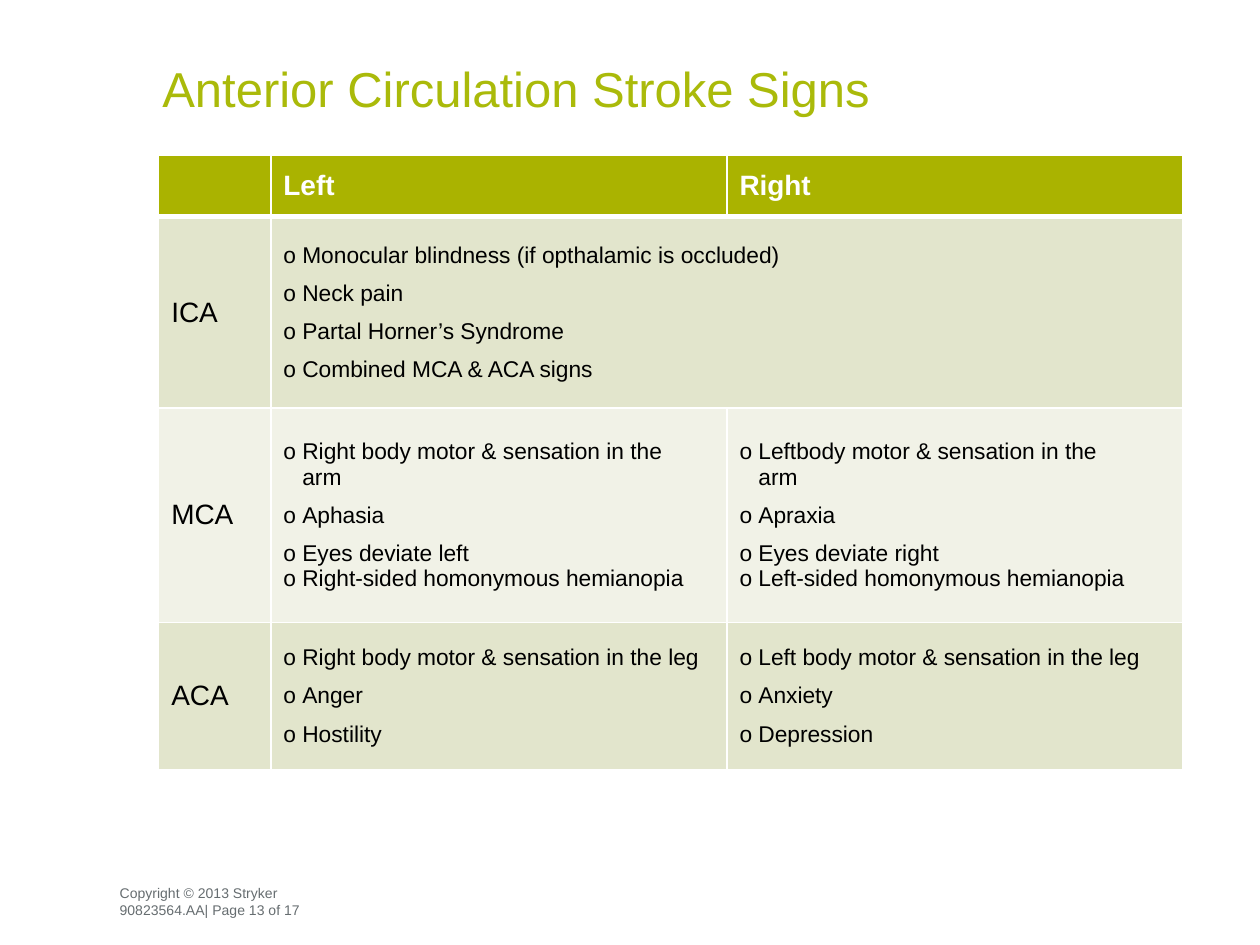
from lxml import etree
from pptx import Presentation
from pptx.dml.color import RGBColor
from pptx.enum.text import MSO_ANCHOR, MSO_AUTO_SIZE
from pptx.oxml.ns import qn
from pptx.util import Inches, Pt

MIDDLE, BOTTOM = MSO_ANCHOR.MIDDLE, MSO_ANCHOR.BOTTOM
FONT = "Arial"
WHITE, BLACK, GRAY = "FFFFFF", "000000", "666D70"
TITLE_GREEN, HEADER_GREEN = "AABA0A", "AAB300"
BANDS = ["E2E5CC", "F1F2E7"]
BULLET_INDENT = Inches(0.15)

# Content: each sign is (text, line spacing); "\n" is a line break
TITLE = "Anterior Circulation Stroke Signs"
FOOTER = ["Copyright © 2013 Stryker", "90823564.AA| Page 13 of 17"]
HEADERS = ["", "Left", "Right"]
ARTERIES = [
    ("ICA", [
        [("Monocular blindness (if opthalamic is occluded)", 1), ("Neck pain", 1.5),
         ("Partal Horner’s Syndrome", 1.5), ("Combined MCA & ACA signs", 1.5)],
    ]),
    ("MCA", [
        [("Right body motor & sensation in the\narm", 1), ("Aphasia", 1.5),
         ("Eyes deviate left", 1.5), ("Right-sided homonymous hemianopia", 1)],
        [("Leftbody motor & sensation in the\narm", 1), ("Apraxia", 1.5),
         ("Eyes deviate right", 1.5), ("Left-sided homonymous hemianopia", 1)],
    ]),
    ("ACA", [
        [("Right body motor & sensation in the leg", 1), ("Anger", 1.5), ("Hostility", 1.5)],
        [("Left body motor & sensation in the leg", 1), ("Anxiety", 1.5), ("Depression", 1.5)],
    ]),
]
COLUMN_WIDTHS = [0.89, 3.62, 3.62]
ROW_HEIGHTS = [0.49, 1.52, 1.7, 1.17]


def color(value):
    return RGBColor.from_string(value)


def add_text(paragraph, text, size, text_color, bold=False):
    for index, line in enumerate(text.split("\n")):
        if index:
            paragraph.add_line_break()
        run = paragraph.add_run()
        run.text = line
        run.font.name = FONT
        run.font.size = Pt(size)
        run.font.bold = bold
        run.font.color.rgb = color(text_color)


def next_paragraph(frame, index):
    return frame.add_paragraph() if index else frame.paragraphs[0]


def add_bullet(paragraph):
    properties = paragraph._p.get_or_add_pPr()
    properties.set("marL", str(BULLET_INDENT))
    properties.set("indent", str(-BULLET_INDENT))
    etree.SubElement(properties, qn("a:buFont"), typeface=FONT)
    etree.SubElement(properties, qn("a:buChar"), char="o")


def style_cell(cell, fill, top=1, bottom=1):
    properties = cell._tc.get_or_add_tcPr()
    for side, width in (("L", 1), ("R", 1), ("T", top), ("B", bottom)):
        line = etree.SubElement(properties, qn(f"a:ln{side}"), w=str(Pt(width)))
        solid = etree.SubElement(line, qn("a:solidFill"))
        etree.SubElement(solid, qn("a:srgbClr"), val=WHITE)
    cell.fill.solid()
    cell.fill.fore_color.rgb = color(fill)
    cell.vertical_anchor = MIDDLE


presentation = Presentation()
presentation.slide_width, presentation.slide_height = Inches(10), Inches(7.5)
slide = presentation.slides.add_slide(presentation.slide_layouts[6])

# Footer
footer = slide.shapes.add_textbox(Inches(0.95), Inches(7.02), Inches(1.47), Inches(0.27)).text_frame
footer.margin_left = footer.margin_right = footer.margin_top = footer.margin_bottom = 0
footer.vertical_anchor = BOTTOM
footer.word_wrap = False
footer.auto_size = MSO_AUTO_SIZE.SHAPE_TO_FIT_TEXT
for index, line in enumerate(FOOTER):
    add_text(next_paragraph(footer, index), line, 8, GRAY)

# Title
title = slide.shapes.add_textbox(Inches(1.19), Inches(0.36), Inches(8.31), Inches(0.67)).text_frame
title.word_wrap = True
title.vertical_anchor = MIDDLE
add_text(title.paragraphs[0], TITLE, 28, TITLE_GREEN)

# Table grid
table = slide.shapes.add_table(
    len(ROW_HEIGHTS), len(COLUMN_WIDTHS), Inches(1.26), Inches(1.23),
    Inches(sum(COLUMN_WIDTHS)), Inches(sum(ROW_HEIGHTS))).table
for column, width in zip(table.columns, COLUMN_WIDTHS):
    column.width = Inches(width)
for row, height in zip(table.rows, ROW_HEIGHTS):
    row.height = Inches(height)

# Header row
for column_index, header in enumerate(HEADERS):
    cell = table.cell(0, column_index)
    style_cell(cell, HEADER_GREEN, bottom=3)
    if header:
        add_text(cell.text_frame.paragraphs[0], header, 16, WHITE, bold=True)

# One row per artery; a single list of signs spans both sides
for row_index, (artery, sides) in enumerate(ARTERIES, start=1):
    for column_index in range(len(HEADERS)):
        style_cell(table.cell(row_index, column_index), BANDS[(row_index - 1) % 2],
                   top=3 if row_index == 1 else 1)
    add_text(table.cell(row_index, 0).text_frame.paragraphs[0], artery, 16, BLACK)
    if len(sides) == 1:
        table.cell(row_index, 1).merge(table.cell(row_index, 2))
    for column_index, signs in enumerate(sides, start=1):
        frame = table.cell(row_index, column_index).text_frame
        for index, (sign, spacing) in enumerate(signs):
            paragraph = next_paragraph(frame, index)
            add_bullet(paragraph)
            paragraph.line_spacing = float(spacing)
            add_text(paragraph, sign, 13, BLACK)

presentation.save("out.pptx")
